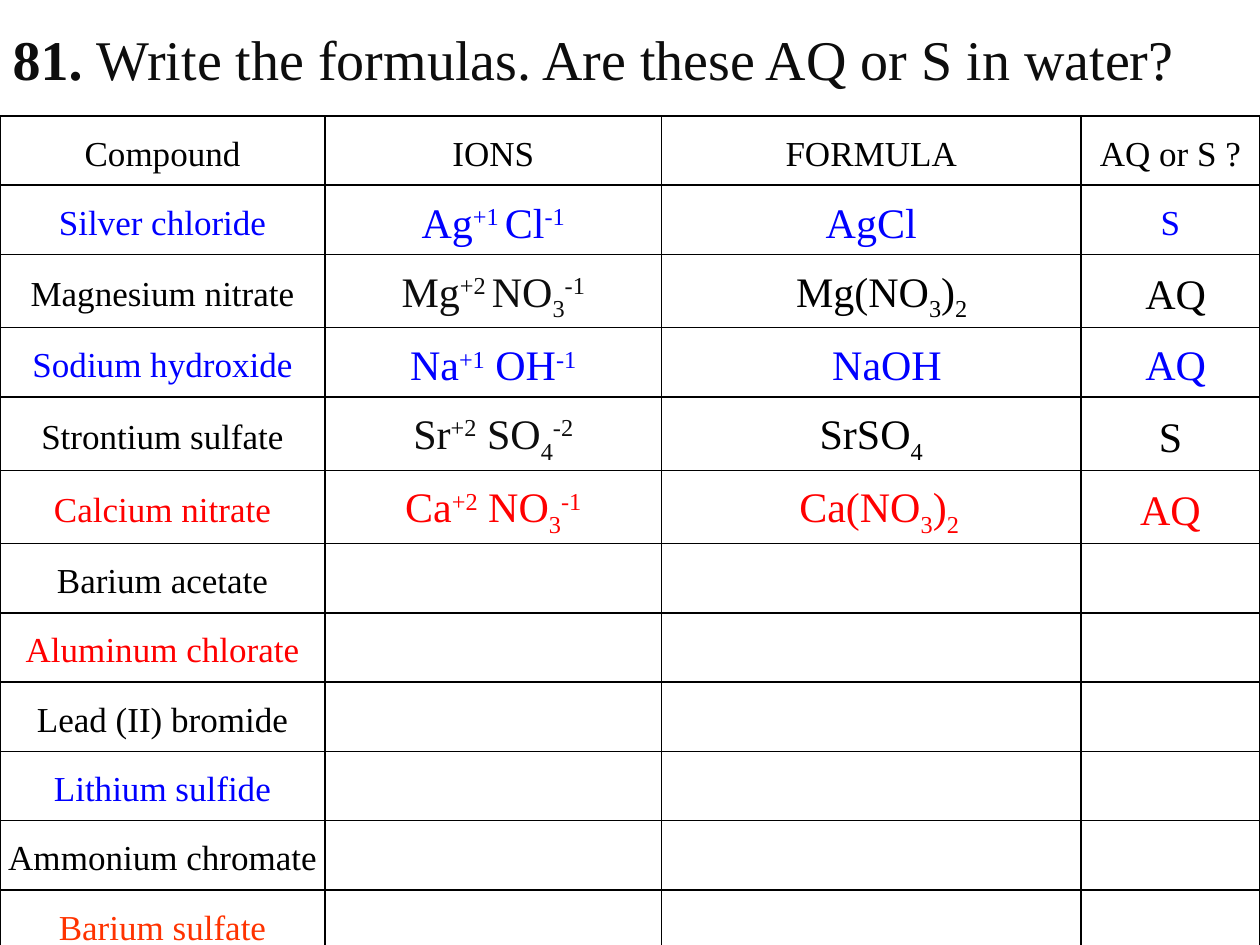
from lxml.etree import SubElement
from pptx import Presentation
from pptx.dml.color import RGBColor
from pptx.enum.text import MSO_ANCHOR, MSO_AUTO_SIZE, PP_ALIGN
from pptx.oxml.ns import qn
from pptx.util import Inches, Pt

FONT = "Times New Roman"
BLACK = RGBColor(0x00, 0x00, 0x00)
CHARCOAL = RGBColor(0x0D, 0x0D, 0x0D)
BLUE = RGBColor(0x00, 0x00, 0xFF)
RED = RGBColor(0xFF, 0x00, 0x00)
ORANGE = RGBColor(0xFF, 0x33, 0x00)

TITLE = [("81. ", True), ("Write the formulas. Are these AQ or S in water?", False)]
HEADERS = ["Compound", "IONS", "FORMULA", "AQ or S ?"]
ROWS = [
    (BLUE, "Silver chloride", "Ag|^+1 |Cl|^-1", "AgCl", "S"),
    (BLACK, "Magnesium nitrate", "Mg|^+2 |NO|_3|^-1", "Mg(NO|_3|)|_2", "AQ"),
    (BLUE, "Sodium hydroxide", "Na|^+1| OH|^-1", "NaOH", "AQ"),
    (BLACK, "Strontium sulfate", "Sr|^+2| SO|_4|^-2", "SrSO|_4", "S"),
    (RED, "Calcium nitrate", "Ca|^+2| NO|_3|^-1", "Ca(NO|_3|)|_2", "AQ"),
    (BLACK, "Barium acetate"),
    (RED, "Aluminum chlorate"),
    (BLACK, "Lead (II) bromide"),
    (BLUE, "Lithium sulfide"),
    (BLACK, "Ammonium chromate"),
    (ORANGE, "Barium sulfate"),
]
INDENTS = {(2, 2): 12, (2, 3): 6, (3, 2): 18, (3, 3): 6, (5, 2): 9}
SMALL_ANSWERS = {(1, 3)}
BASELINES = {"^": "30000", "_": "-25000"}

COLUMN_WIDTHS = [2.58, 2.67, 3.33, 1.42]
TABLE_TOP = 0.92
ROW_HEIGHT = 0.55
CELL_MARGIN = Inches(0.04)


def format_run(run, size, color, bold=False):
    run.font.name = FONT
    run.font.size = Pt(size)
    run.font.color.rgb = color
    run.font.bold = bold


def draw_borders(cell):
    properties = cell._tc.get_or_add_tcPr()
    for side in ("lnL", "lnR", "lnT", "lnB"):
        line = SubElement(properties, qn(f"a:{side}"), w=str(Pt(1)))
        fill = SubElement(line, qn("a:solidFill"))
        SubElement(fill, qn("a:srgbClr"), val=str(BLACK))


def write_cell(cell, formula, size, color, indent):
    cell.vertical_anchor = MSO_ANCHOR.MIDDLE
    cell.margin_left = CELL_MARGIN + Pt(indent)
    cell.margin_right = cell.margin_top = cell.margin_bottom = CELL_MARGIN
    paragraph = cell.text_frame.paragraphs[0]
    paragraph.alignment = PP_ALIGN.CENTER
    paragraph.line_spacing = 1.19
    paragraph.space_after = Pt(6)
    for part in formula.split("|"):
        run = paragraph.add_run()
        run.text = part.lstrip("^_")
        format_run(run, size, color)
        if part[0] in BASELINES:
            run.font._element.set("baseline", BASELINES[part[0]])


def add_title(slide):
    title = slide.shapes.title
    title.left, title.top = 0, 0
    title.width, title.height = Inches(10), Inches(TABLE_TOP)
    frame = title.text_frame
    frame.auto_size = MSO_AUTO_SIZE.NONE
    frame.vertical_anchor = MSO_ANCHOR.MIDDLE
    paragraph = frame.paragraphs[0]
    paragraph.alignment = PP_ALIGN.LEFT
    for text, bold in TITLE:
        run = paragraph.add_run()
        run.text = text
        format_run(run, 32, CHARCOAL, bold)


def add_compound_table(slide):
    rows = [(BLACK, *HEADERS), *ROWS]
    table = slide.shapes.add_table(
        len(rows), len(HEADERS), 0, Inches(TABLE_TOP),
        Inches(sum(COLUMN_WIDTHS)), Inches(ROW_HEIGHT * len(rows)),
    ).table
    table.first_row = table.horz_banding = False
    for column, width in zip(table.columns, COLUMN_WIDTHS):
        column.width = Inches(width)
    for row_index, (color, *texts) in enumerate(rows):
        for column_index in range(len(HEADERS)):
            cell = table.cell(row_index, column_index)
            draw_borders(cell)
            cell.fill.background()
            if column_index >= len(texts):
                continue
            position = (row_index, column_index)
            small = row_index == 0 or column_index == 0 or position in SMALL_ANSWERS
            ions_in_black = row_index > 0 and column_index == 1 and color == BLACK
            write_cell(
                cell, texts[column_index], 20 if small else 24,
                CHARCOAL if ions_in_black else color, INDENTS.get(position, 0),
            )


def main():
    presentation = Presentation()
    presentation.slide_width, presentation.slide_height = Inches(10), Inches(7.5)
    slide = presentation.slides.add_slide(presentation.slide_layouts[5])
    add_title(slide)
    add_compound_table(slide)
    presentation.save("out.pptx")


if __name__ == "__main__":
    main()
